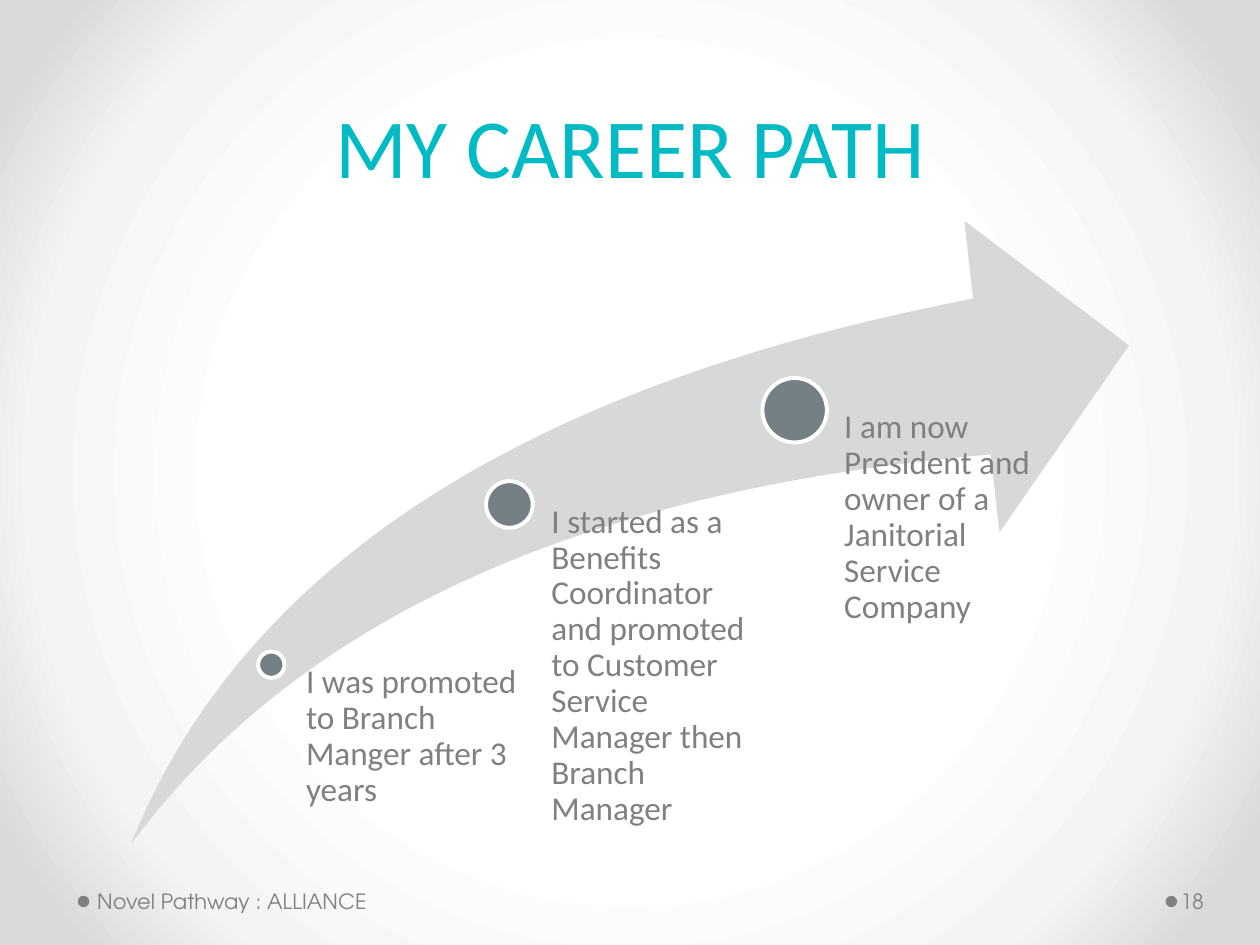
from dataclasses import dataclass

from lxml.etree import SubElement
from pptx import Presentation
from pptx.dml.color import RGBColor
from pptx.enum.shapes import MSO_SHAPE
from pptx.enum.text import MSO_ANCHOR, PP_ALIGN
from pptx.oxml.ns import qn
from pptx.slide import Slide
from pptx.util import Cm, Pt


@dataclass(frozen=True)
class Theme:
    title: str = "00BAC4"
    text: str = "808080"
    arrow: str = "D6D8D9"
    marker: str = "758085"
    outline: str = "FFFFFF"
    background: tuple = ((50, "FFFFFF"), (76, "F4F4F4"), (92, "DADADA"))
    body_font: str = "Calibri"
    footer_font: str = "TeX Gyre Adventor"
    title_size: float = 48
    body_size: float = 19
    footer_size: float = 12
    outline_width: float = 2.25


@dataclass(frozen=True)
class Step:
    """Career step; lengths in centimetres."""
    x: float  # marker centre
    y: float
    diameter: float
    text_left: float
    text_width: float
    text: str


@dataclass(frozen=True)
class Footer:
    dot_left: float
    left: float
    width: float
    inset: float
    text: str


THEME = Theme()
STEPS_BOTTOM = 17.02
STEPS = (
    Step(5.47, 13.4, 0.53, 5.89, 4.7,
         "I was promoted to Branch Manger after 3 years"),
    Step(10.27, 10.17, 0.94, 10.62, 4.83,
         "I started as a Benefits Coordinator and promoted to Customer "
         "Service Manager then Branch Manager"),
    Step(16.02, 8.27, 1.3, 16.33, 4.83,
         "I am now President and owner of a Janitorial Service Company"),
)
FOOTERS = (
    Footer(1.57, 1.83, 7.9, 0.13, "Novel Pathway : ALLIANCE"),
    Footer(23.5, 23.72, 1.55, 0.08, "18"),
)


def set_background(s: Slide) -> None:
    s.background.fill.gradient()
    grad = s.element.find(".//" + qn("a:gradFill"))
    for child in list(grad):
        grad.remove(child)
    stops = SubElement(grad, qn("a:gsLst"))
    for pos, color in THEME.background:
        gs = SubElement(stops, qn("a:gs"), pos=str(pos * 1000))
        SubElement(gs, qn("a:srgbClr"), val=color)
    path = SubElement(grad, qn("a:path"), path="circle")
    SubElement(path, qn("a:fillToRect"), l="50000", t="50000", r="50000", b="50000")


def add_filled(s: Slide, kind: MSO_SHAPE, left: float, top: float,
               width: float, height: float, color: str, outlined: bool = False):
    sp = s.shapes.add_shape(kind, Cm(left), Cm(top), Cm(width), Cm(height))
    sp.shadow.inherit = False
    sp.fill.solid()
    sp.fill.fore_color.rgb = RGBColor.from_string(color)
    if outlined:
        sp.line.color.rgb = RGBColor.from_string(THEME.outline)
        sp.line.width = Pt(THEME.outline_width)
    else:
        sp.line.fill.background()
    return sp


def add_text(s: Slide, left: float, top: float, width: float, height: float,
             text: str, size: float, font: str = THEME.body_font,
             color: str = THEME.text, anchor: MSO_ANCHOR = MSO_ANCHOR.TOP,
             insets: tuple = (0, 0, 0, 0)):
    tf = s.shapes.add_textbox(Cm(left), Cm(top), Cm(width), Cm(height)).text_frame
    tf.word_wrap = True
    tf.vertical_anchor = anchor
    tf.margin_left, tf.margin_top, tf.margin_right, tf.margin_bottom = map(Cm, insets)
    p = tf.paragraphs[0]
    r = p.add_run()
    r.text = text
    r.font.size = Pt(size)
    r.font.name = font
    r.font.color.rgb = RGBColor.from_string(color)
    return p


def add_step(s: Slide, step: Step) -> None:
    d = step.diameter
    add_filled(s, MSO_SHAPE.OVAL, step.x - d / 2, step.y - d / 2, d, d,
               THEME.marker, outlined=True)
    p = add_text(s, step.text_left, step.y, step.text_width, STEPS_BOTTOM - step.y,
                 step.text, THEME.body_size, insets=(d * 0.53, 0, 0, 0))
    p.line_spacing = 0.9


def add_footer(s: Slide, footer: Footer) -> None:
    add_filled(s, MSO_SHAPE.OVAL, footer.dot_left, 18.06, 0.23, 0.23, THEME.text)
    add_text(s, footer.left, 17.65, footer.width, 1.02, footer.text,
             THEME.footer_size, THEME.footer_font, anchor=MSO_ANCHOR.MIDDLE,
             insets=(footer.inset, 0.13, 0.13, 0.13))


def main() -> None:
    prs = Presentation()
    prs.slide_width, prs.slide_height = Cm(25.4), Cm(19.05)
    s = prs.slides.add_slide(prs.slide_layouts[6])
    set_background(s)

    # Title
    p = add_text(s, 1.27, 0.38, 22.86, 3.68, "MY CAREER PATH", THEME.title_size,
                 color=THEME.title, anchor=MSO_ANCHOR.BOTTOM,
                 insets=(0.25, 0.13, 0.25, 0.13))
    p.alignment = PP_ALIGN.CENTER
    p.line_spacing = Pt(58)

    # Rising arrow with the career steps along it
    arrow = add_filled(s, MSO_SHAPE.SWOOSH_ARROW, 2.64, 4.45, 20.12, 12.57, THEME.arrow)
    arrow.adjustments[0] = arrow.adjustments[1] = 0.25
    for step in STEPS:
        add_step(s, step)

    # Footer and slide number
    for footer in FOOTERS:
        add_footer(s, footer)

    prs.save("out.pptx")


if __name__ == "__main__":
    main()
